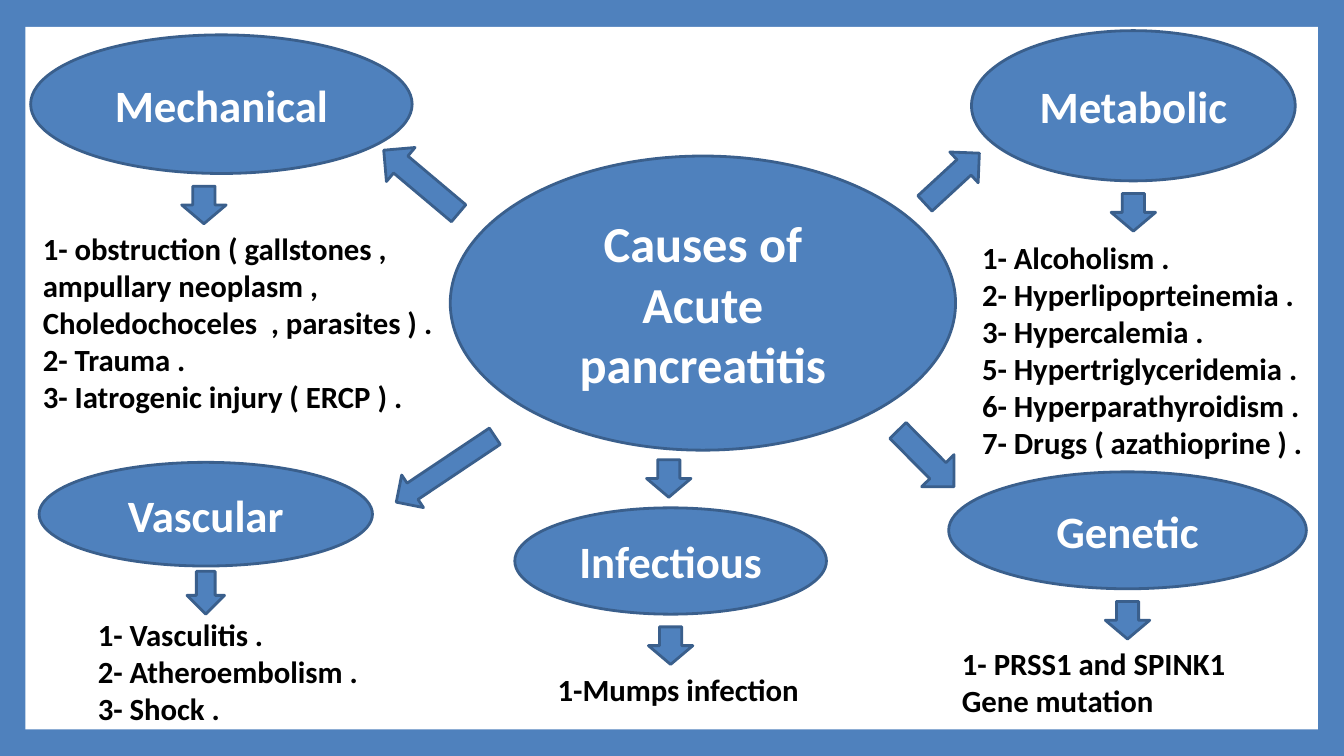
from pptx import Presentation
from pptx.dml.color import RGBColor
from pptx.enum import shapes, text
from pptx.util import Cm, Pt

BLUE, EDGE, WHITE, BLACK = "4F81BD", "3A5F8C", "FFFFFF", "000000"
ARROW = (0.84, 0.71)

CAUSES = [
    dict(label="Mechanical", box=(0.58, 0.66, 7.21, 2.62), shift=-0.33,
         details=(0.56, 4.22, 8.18, 4.5),
         lines=["1- obstruction ( gallstones , ampullary neoplasm , "
                "Choledochoceles  , parasites ) .",
                "2- Trauma .", "3- Iatrogenic injury ( ERCP ) ."]),
    dict(label="Vascular", box=(0.74, 8.74, 6.3, 1.96),
         arrow=(0.71, 0.81), gap=0.1, details=(1.6, 11.51, 6.3, 2.36),
         lines=["1- Vasculitis .", "2- Atheroembolism .", "3- Shock ."]),
    dict(label="Metabolic", box=(18.36, 0.58, 6.12, 2.84),
         details=(18.31, 4.39, 6.9, 4.5),
         lines=["1- Alcoholism .", "2- Hyperlipoprteinemia .",
                "3- Hypercalemia .", "5- Hypertriglyceridemia .",
                "6- Hyperparathyroidism .", "7- Drugs ( azathioprine ) ."]),
    dict(label="Genetic", box=(17.93, 8.92, 6.76, 2.21),
         details=(17.93, 12.07, 6.4, 1.68),
         lines=["1- PRSS1 and SPINK1 Gene mutation"]),
    dict(label="Infectious", box=(9.73, 9.6, 5.89, 2.01),
         details=(10.29, 12.55, 5.31, 0.97),
         lines=["1-Mumps infection"]),
]

SPOKES = [
    ((7.54, 2.51, 0.84, 1.85), 130.1),
    ((17.6, 2.67, 0.79, 1.4), 227.3),
    ((8.05, 7.75, 0.74, 2.24), 56.2),
    ((12.22, 8.69, *ARROW), 0),
    ((17.07, 7.92, 0.86, 1.5), 315.2),
]


def color(value):
    return RGBColor.from_string(value)


def cm(box):
    return [Cm(length) for length in box]


def write(holder, lines, size, fill=BLACK, align=text.PP_ALIGN.LEFT,
          anchor=text.MSO_ANCHOR.TOP, inset=0.25):
    frame = holder.text_frame
    frame.word_wrap = True
    frame.vertical_anchor = anchor
    frame.margin_left = frame.margin_right = Cm(inset)
    for index, line in enumerate(lines):
        paragraph = frame.add_paragraph() if index else frame.paragraphs[0]
        paragraph.alignment = align
        run = paragraph.add_run()
        run.text = line
        run.font.name = "Calibri"
        run.font.size = Pt(size)
        run.font.bold = True
        run.font.color.rgb = color(fill)


def draw(slide, kind, box, fill=BLUE, edge=EDGE, rotation=0):
    shape = slide.shapes.add_shape(kind, *cm(box))
    shape.shadow.inherit = False
    shape.rotation = rotation
    shape.fill.solid()
    shape.fill.fore_color.rgb = color(fill)
    if edge:
        shape.line.color.rgb = color(edge)
        shape.line.width = Pt(1.5)
    else:
        shape.line.fill.background()
    return shape


def add_arrow(slide, box, rotation=0):
    draw(slide, shapes.MSO_SHAPE.DOWN_ARROW, box, rotation=rotation)


def add_bubble(slide, box, label, size, inset=0.25):
    bubble = draw(slide, shapes.MSO_SHAPE.OVAL, box)
    write(bubble, [label], size, fill=WHITE, align=text.PP_ALIGN.CENTER,
          anchor=text.MSO_ANCHOR.MIDDLE, inset=inset)


def add_cause(slide, label, box, details, lines, arrow=ARROW, gap=0.24, shift=0):
    left, top, width, height = box
    add_bubble(slide, box, label, 24)
    arrow_left = left + (width - arrow[0]) / 2 + shift
    add_arrow(slide, (arrow_left, top + height + gap, *arrow))
    write(slide.shapes.add_textbox(*cm(details)), lines, 16.5)


def add_center(slide, box):
    add_bubble(slide, box, "Causes of Acute pancreatitis", 27, inset=0.6)
    for spoke, rotation in SPOKES:
        add_arrow(slide, spoke, rotation)


def add_page(slide, box):
    slide.background.fill.solid()
    slide.background.fill.fore_color.rgb = color(BLUE)
    draw(slide, shapes.MSO_SHAPE.RECTANGLE, box, fill=WHITE, edge=None)


def main():
    deck = Presentation()
    deck.slide_width, deck.slide_height = Cm(25.4), Cm(14.29)
    slide = deck.slides.add_slide(deck.slide_layouts[6])
    add_page(slide, (0.48, 0.51, 24.43, 13.28))
    add_center(slide, (8.51, 2.95, 9.55, 5.56))
    for cause in CAUSES:
        add_cause(slide, **cause)
    deck.save("out.pptx")


if __name__ == "__main__":
    main()
